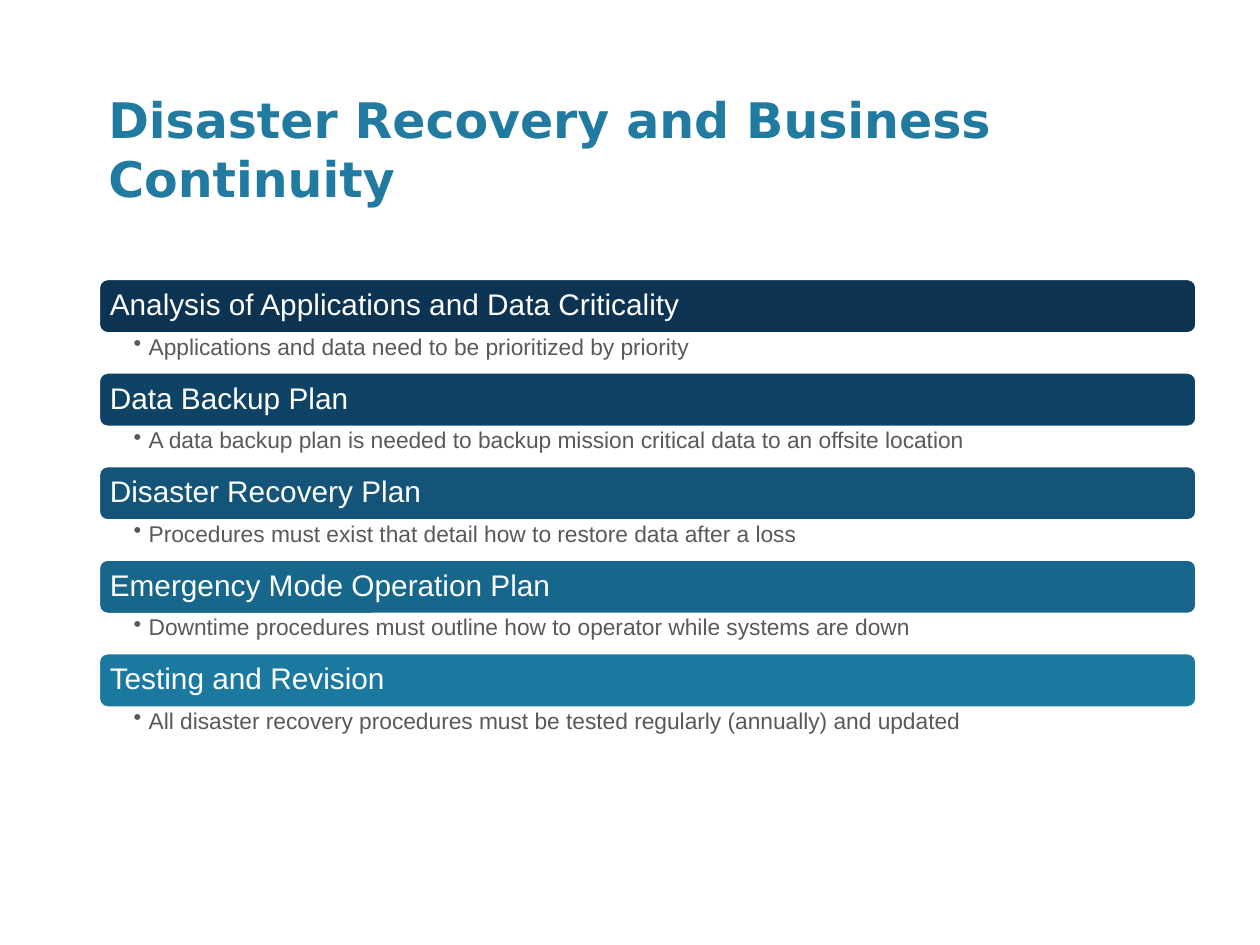
"""Build a slide that lists the parts of a disaster recovery plan."""
from dataclasses import dataclass

from lxml.etree import SubElement
from pptx import Presentation
from pptx.dml.color import RGBColor
from pptx.enum.shapes import MSO_SHAPE as Shape
from pptx.enum.text import MSO_ANCHOR as Anchor, MSO_AUTO_SIZE as AutoSize, PP_ALIGN as Align
from pptx.oxml.ns import qn
from pptx.util import Inches, Pt

TITLE = "Disaster Recovery and Business Continuity"
PLANS = [
    ("Analysis of Applications and Data Criticality",
     "Applications and data need to be prioritized by priority", "0C3351"),
    ("Data Backup Plan",
     "A data backup plan is needed to backup mission critical data to an offsite location", "0F4365"),
    ("Disaster Recovery Plan",
     "Procedures must exist that detail how to restore data after a loss", "135478"),
    ("Emergency Mode Operation Plan",
     "Downtime procedures must outline how to operator while systems are down", "17668C"),
    ("Testing and Revision",
     "All disaster recovery procedures must be tested regularly (annually) and updated", "1B799F"),
]


@dataclass(frozen=True)
class Theme:
    title_font: str = "DejaVu Sans"
    body_font: str = "Arial"
    title_size: int = 28
    bar_size: int = 17
    detail_size: int = 13
    title_color: str = "217AA0"
    white: str = "FFFFFF"
    detail_color: str = "595959"


THEME = Theme()
LEFT, WIDTH = 0.78, 8.72
TITLE_TOP, TITLE_HEIGHT = 0.63, 0.88
FIRST_TOP, LAST_TOP = 2.21, 5.18
BAR_HEIGHT, DETAIL_HEIGHT = 0.44, 0.31
BULLET_INDENT = 0.12


def write(box, text, *, size, color, insets, font=THEME.body_font, bold=False,
          anchor=Anchor.TOP, spacing=1.0, after=0, bullet=False):
    frame = box.text_frame
    frame.word_wrap = True
    frame.auto_size = AutoSize.NONE
    frame.vertical_anchor = anchor
    (frame.margin_left, frame.margin_top,
     frame.margin_right, frame.margin_bottom) = map(Inches, insets)
    para = frame.paragraphs[0]
    para.alignment = Align.LEFT
    para.line_spacing = spacing
    para.space_after = Pt(after)
    if bullet:
        para.level = 1
        properties = para._p.get_or_add_pPr()
        properties.set("marL", str(Inches(BULLET_INDENT)))
        properties.set("indent", str(-Inches(BULLET_INDENT)))
        SubElement(properties, qn("a:buChar")).set("char", "•")
    span = para.add_run()
    span.text = text
    span.font.name = font
    span.font.size = Pt(size)
    span.font.bold = bold
    span.font.color.rgb = RGBColor.from_string(color)


def add_plan(page, top, pitch, heading, detail, fill):
    bar = page.shapes.add_shape(Shape.ROUNDED_RECTANGLE, Inches(LEFT), Inches(top),
                                Inches(WIDTH), Inches(BAR_HEIGHT))
    bar.shadow.inherit = False
    bar.fill.solid()
    bar.fill.fore_color.rgb = RGBColor.from_string(fill)
    bar.line.color.rgb = RGBColor.from_string(THEME.white)
    bar.line.width = Pt(2)
    write(bar, heading, size=THEME.bar_size, color=THEME.white, insets=(0.07,) * 4,
          anchor=Anchor.MIDDLE, spacing=0.9, after=6)

    box = page.shapes.add_textbox(Inches(LEFT), Inches(top + pitch - DETAIL_HEIGHT),
                                  Inches(WIDTH), Inches(DETAIL_HEIGHT))
    write(box, detail, size=THEME.detail_size, color=THEME.detail_color,
          insets=(0.28, 0.02, 0.13, 0.02), spacing=0.9, after=2.6, bullet=True)


def main():
    deck = Presentation()
    deck.slide_width, deck.slide_height = Inches(10), Inches(7.5)
    page = deck.slides.add_slide(deck.slide_layouts[5])

    title = page.shapes.title
    title.left, title.top = Inches(LEFT), Inches(TITLE_TOP)
    title.width, title.height = Inches(WIDTH), Inches(TITLE_HEIGHT)
    write(title, TITLE, size=THEME.title_size, color=THEME.title_color,
          insets=(0.08, 0.08, 0.08, 0.05), font=THEME.title_font, bold=True)

    pitch = (LAST_TOP - FIRST_TOP) / (len(PLANS) - 1)
    for row, plan in enumerate(PLANS):
        add_plan(page, FIRST_TOP + row * pitch, pitch, *plan)

    deck.save("out.pptx")


if __name__ == "__main__":
    main()
